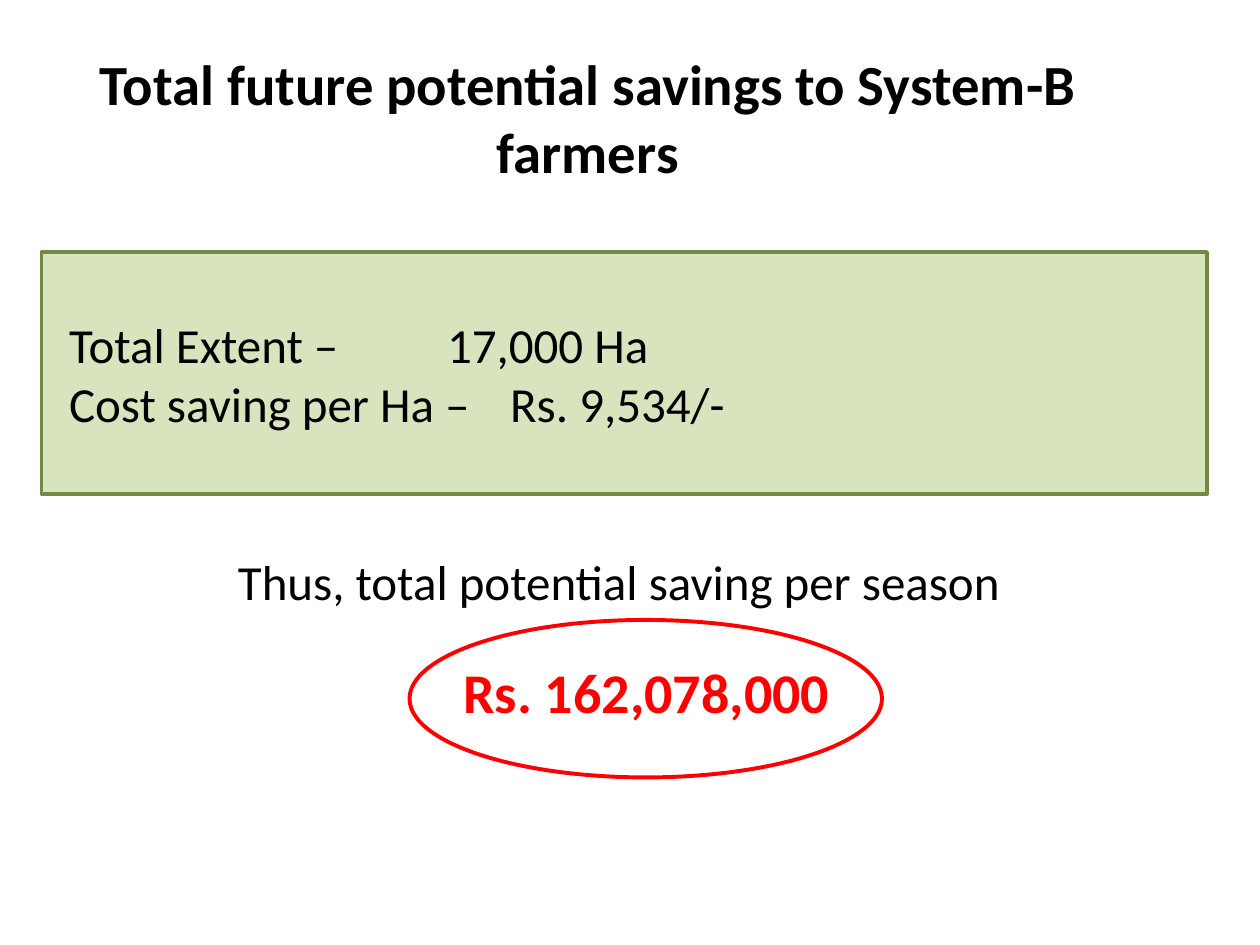
from pptx import Presentation
from pptx.dml.color import RGBColor
from pptx.enum.shapes import MSO_SHAPE
from pptx.enum.text import MSO_ANCHOR, PP_ALIGN
from pptx.util import Inches, Pt

RECTANGLE, OVAL = MSO_SHAPE.RECTANGLE, MSO_SHAPE.OVAL
TOP, MIDDLE = MSO_ANCHOR.TOP, MSO_ANCHOR.MIDDLE
LEFT, CENTER = PP_ALIGN.LEFT, PP_ALIGN.CENTER

TITLE = "Total future potential savings to System-B farmers"
# Tabs line the values up on the default one-inch stops
FACTS = ["Total Extent –\t\t17,000 Ha", "Cost saving per Ha –\tRs. 9,534/-"]
CONCLUSION = "Thus, total potential saving per season"
TOTAL = "Rs. 162,078,000"

THEME = {
    "font": "Calibri",
    "text": RGBColor(0x00, 0x00, 0x00),
    "accent": RGBColor(0xFF, 0x00, 0x00),
    "panel": RGBColor(0xD7, 0xE4, 0xBD),
    "panel_line": RGBColor(0x73, 0x8A, 0x42),
    "title_size": 32.4,
    "body_size": 28,
    "total_size": 32,
}
INDENT = Inches(0.12)


def write(shape, lines, size, color=THEME["text"], bold=False,
          align=LEFT, anchor=TOP, indent=0, wrap=True):
    frame = shape.text_frame
    frame.word_wrap = wrap
    frame.vertical_anchor = anchor
    frame.text = "\n".join(lines)
    for paragraph in frame.paragraphs:
        paragraph.alignment = align
        font = paragraph.font
        font.name, font.size, font.bold = THEME["font"], Pt(size), bold
        font.color.rgb = color
        if indent:
            properties = paragraph._p.get_or_add_pPr()
            properties.set("marL", str(indent))
            properties.set("indent", "0")


def add_outline(slide, kind, box, line_color, line_width, fill=None):
    shape = slide.shapes.add_shape(kind, *map(Inches, box))
    shape.shadow.inherit = False
    if fill is None:
        shape.fill.background()
    else:
        shape.fill.solid()
        shape.fill.fore_color.rgb = fill
    shape.line.color.rgb = line_color
    shape.line.width = Pt(line_width)
    return shape


def add_text(slide, box, text, size, **style):
    write(slide.shapes.add_textbox(*map(Inches, box)), [text], size, **style)


def main():
    deck = Presentation()
    deck.slide_width, deck.slide_height = Inches(10), Inches(7.5)
    slide = deck.slides.add_slide(deck.slide_layouts[6])

    facts_panel = add_outline(slide, RECTANGLE, (0.33, 2, 9.25, 1.92),
                              THEME["panel_line"], 2, THEME["panel"])
    write(facts_panel, FACTS, THEME["body_size"], anchor=MIDDLE, indent=INDENT)

    add_text(slide, (0.5, 0.3, 8.33, 1.25), TITLE, THEME["title_size"],
             bold=True, align=CENTER, anchor=MIDDLE)
    add_text(slide, (1.67, 4.33, 6.58, 0.57), CONCLUSION, THEME["body_size"],
             indent=INDENT)
    add_text(slide, (3.58, 5.17, 3.14, 0.64), TOTAL, THEME["total_size"],
             color=THEME["accent"], bold=True, wrap=False)
    add_outline(slide, OVAL, (3.25, 4.92, 3.75, 1.25), THEME["accent"], 2.25)

    deck.save("out.pptx")


if __name__ == "__main__":
    main()
